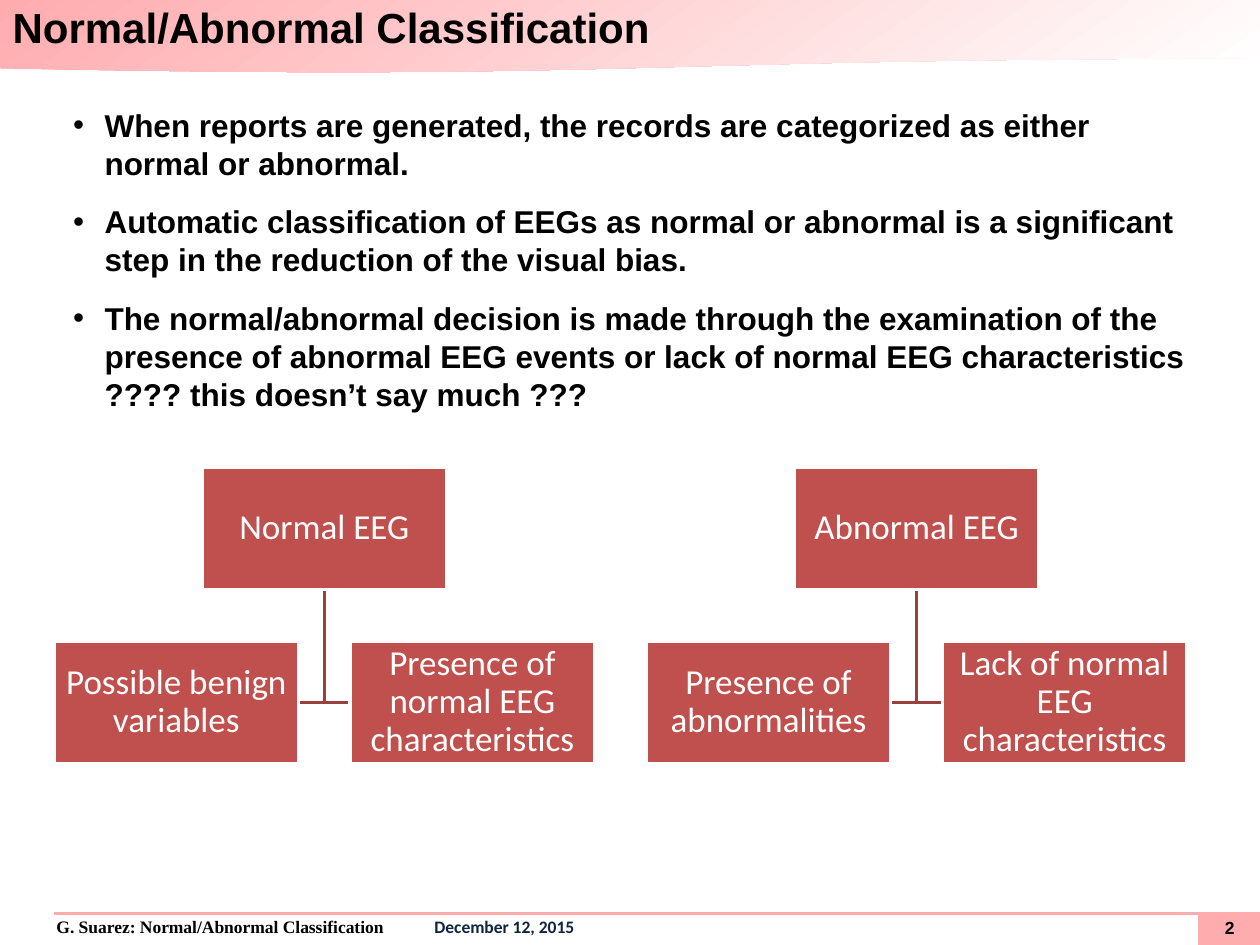
from lxml import etree
from pptx import Presentation
from pptx.dml.color import RGBColor
from pptx.enum.shapes import MSO_CONNECTOR, MSO_SHAPE
from pptx.enum.text import MSO_ANCHOR, MSO_AUTO_SIZE, PP_ALIGN
from pptx.oxml.ns import qn
from pptx.util import Inches, Pt

RECT, DOCUMENT = MSO_SHAPE.RECTANGLE, MSO_SHAPE.FLOWCHART_DOCUMENT
LEFT, CENTER = PP_ALIGN.LEFT, PP_ALIGN.CENTER
TOP, MIDDLE = MSO_ANCHOR.TOP, MSO_ANCHOR.MIDDLE

COLORS = {"pink": "FFACAF", "white": "FFFFFF", "black": "000000",
          "navy": "0F243E", "box": "C0504D", "branch": "9A403E"}
RGB = {name: RGBColor.from_string(value) for name, value in COLORS.items()}


def add_text(p, text, size, font="Arial", color="black", bold=True):
    r = p.add_run()
    r.text = text
    r.font.size = Pt(size)
    r.font.name = font
    r.font.bold = bold
    r.font.color.rgb = RGB[color]


def set_frame(sp, inset_x=0.0, inset_y=0.0, anchor=TOP):
    """Set wrapping, insets and anchor, and return the text frame."""
    tf = sp.text_frame
    tf.word_wrap = True
    tf.auto_size = MSO_AUTO_SIZE.NONE
    tf.margin_left = tf.margin_right = Inches(inset_x)
    tf.margin_top = tf.margin_bottom = Inches(inset_y)
    tf.vertical_anchor = anchor
    return tf


prs = Presentation()
prs.slide_width, prs.slide_height = Inches(10), Inches(7.5)
s = prs.slides.add_slide(prs.slide_layouts[1])
shapes = s.shapes
title, body = shapes.title, s.placeholders[1]

# Banner and footer
banner = shapes.add_shape(DOCUMENT, 0, 0, Inches(10), Inches(0.58))
banner.shadow.inherit = False
banner.line.fill.background()
banner.fill.gradient()
banner.fill.gradient_angle = 305
for stop, position, color in zip(banner.fill.gradient_stops, (0, 1), ("pink", "white")):
    stop.position = position
    stop.color.rgb = RGB[color]

corner = shapes.add_shape(RECT, Inches(9.51), Inches(7.24), Inches(0.49), Inches(0.26))
corner.shadow.inherit = False
corner.fill.solid()
corner.fill.fore_color.rgb = RGB["pink"]
corner.line.fill.background()

footer = shapes.add_textbox(Inches(0.04), Inches(7.23), Inches(9.96), Inches(0.26))
p = set_frame(footer, 0.1, 0.05).paragraphs[0]
pPr = p._p.get_or_add_pPr()
pPr.set("marL", str(Inches(0.31)))
pPr.set("indent", "0")
tabs = etree.SubElement(pPr, qn("a:tabLst"))
etree.SubElement(tabs, qn("a:tab"), pos=str(Inches(9.31)), algn="r")
p.line_spacing = 0.95
add_text(p, "G. Suarez: Normal/Abnormal Classification", 10, font="Times New Roman")
add_text(p, "\tDecember 12, 2015", 10, font="Calibri", color="navy")

rule = shapes.add_connector(MSO_CONNECTOR.STRAIGHT, Inches(0.43), Inches(7.25),
                            Inches(10), Inches(7.25))
rule.line.color.rgb = RGB["pink"]
rule.line.width = Pt(1.5)
etree.SubElement(rule._element.spPr, qn("a:effectLst"))

number = shapes.add_textbox(Inches(9.56), Inches(7.28), Inches(0.4), Inches(0.17))
p = set_frame(number, anchor=MIDDLE).paragraphs[0]
p.alignment = CENTER
add_text(p, "2", 10)

# Title and bullets, in front of the banner
for sp in (title, body):
    shapes._spTree.append(sp._element)

title.left, title.top, title.width, title.height = 0, 0, Inches(10), Inches(0.43)
p = set_frame(title, 0.1, anchor=MIDDLE).paragraphs[0]
p.alignment = LEFT
add_text(p, "Normal/Abnormal Classification", 24)

body.left, body.top = Inches(0.58), Inches(0.84)
body.width, body.height = Inches(8.84), Inches(3.05)
tf = set_frame(body)
bullets = [
    "When reports are generated, the records are categorized as either normal or abnormal.",
    "Automatic classification of EEGs as normal or abnormal is a significant step in the "
    "reduction of the visual bias.",
    "The normal/abnormal decision is made through the examination of the presence of "
    "abnormal EEG events or lack of normal EEG characteristics ???? this doesn’t say much ???",
]
for i, text in enumerate(bullets):
    p = tf.add_paragraph() if i else tf.paragraphs[0]
    pPr = p._p.get_or_add_pPr()
    pPr.set("marL", str(Inches(0.25)))
    pPr.set("indent", str(-Inches(0.25)))
    etree.SubElement(pPr, qn("a:buChar"), char="•")
    p.space_before, p.space_after = Pt(0), Pt(12)
    add_text(p, text, 18)

# Two trees, each with one parent over two children
BOX_W, BOX_H, STEP = 1.94, 0.97, 2.35
FIRST_LEFT, PARENT_TOP, CHILD_TOP = 0.43, 3.71, 5.09
trees = [
    ("Normal EEG", ["Possible benign variables", "Presence of normal EEG characteristics"]),
    ("Abnormal EEG", ["Presence of abnormalities", "Lack of normal EEG characteristics"]),
]
boxes = []
for i, (parent, children) in enumerate(trees):
    left = FIRST_LEFT + 2 * i * STEP
    parent_left = left + STEP / 2
    boxes.append((parent, parent_left, PARENT_TOP))
    boxes += [(text, left + j * STEP, CHILD_TOP) for j, text in enumerate(children)]

    center = Inches(parent_left + BOX_W / 2)
    child_middle = Inches(CHILD_TOP + BOX_H / 2)
    for side_x in (left + STEP, left + BOX_W):
        builder = shapes.build_freeform(center, Inches(PARENT_TOP + BOX_H))
        builder.add_line_segments([(center, child_middle), (Inches(side_x), child_middle)],
                                  close=False)
        branch = builder.convert_to_shape()
        branch.shadow.inherit = False
        branch.fill.background()
        branch.line.color.rgb = RGB["branch"]
        branch.line.width = Pt(2)

for text, left, top in boxes:
    box = shapes.add_shape(RECT, Inches(left), Inches(top), Inches(BOX_W), Inches(BOX_H))
    box.shadow.inherit = False
    box.fill.solid()
    box.fill.fore_color.rgb = RGB["box"]
    box.line.color.rgb = RGB["white"]
    box.line.width = Pt(2)
    p = set_frame(box, 0.01, 0.01, MIDDLE).paragraphs[0]
    p.alignment = CENTER
    p.line_spacing = 0.9
    add_text(p, text, 20, font="Calibri", color="white", bold=False)

prs.save("out.pptx")
